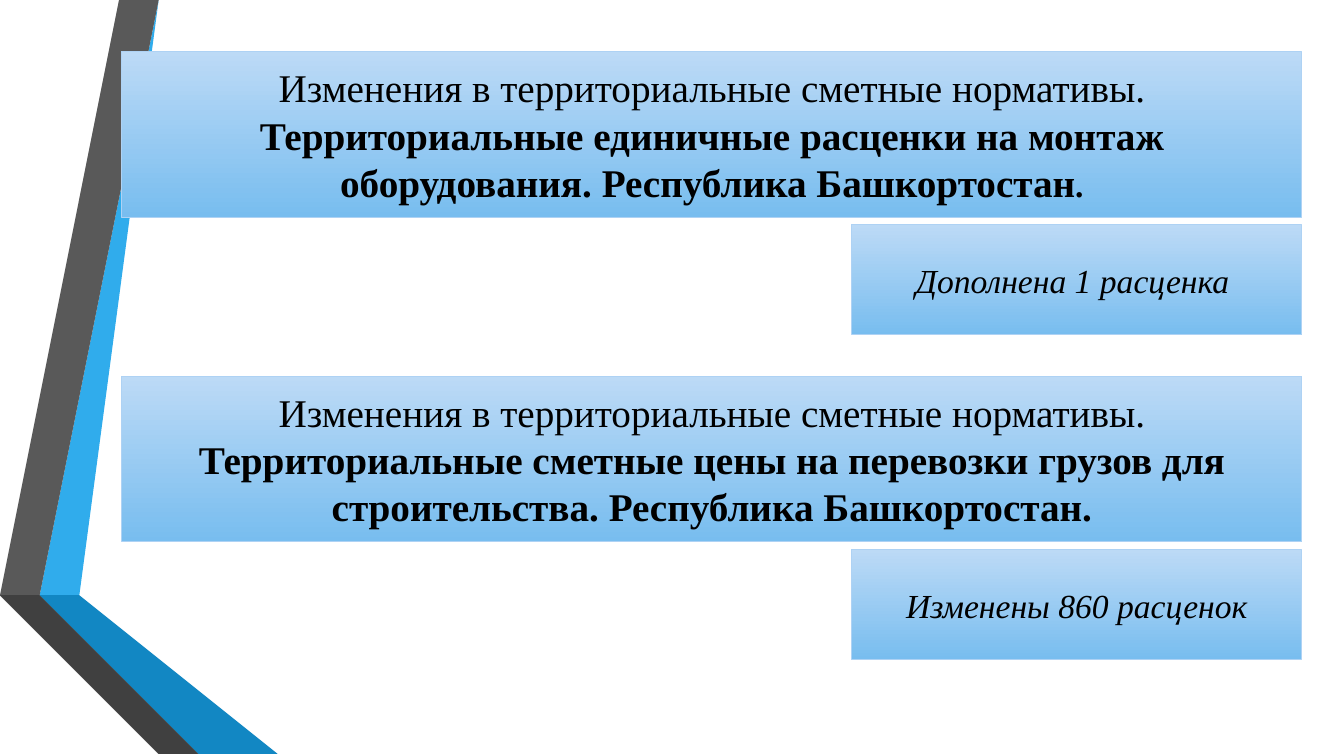
"""Build the slide on changes to the territorial estimate standards."""
from dataclasses import dataclass

from pptx import Presentation
from pptx.dml.color import RGBColor
from pptx.enum.shapes import MSO_SHAPE as Preset
from pptx.enum.text import MSO_ANCHOR as Anchor, MSO_AUTO_SIZE as AutoSize, PP_ALIGN as Align
from pptx.util import Cm, Pt

INTRO = "Изменения в территориальные сметные нормативы. "
SECTIONS = [
    {
        "heading": [
            (INTRO, False, None),
            ("Территориальные единичные расценки на монтаж оборудования. "
             "Республика Башкортостан", True, None),
            (".", True, 24),
        ],
        "note": "Дополнена 1 расценка ",
    },
    {
        "heading": [
            (INTRO, False, None),
            ("Территориальные сметные цены на перевозки грузов для строительства. "
             "Республика Башкортостан.", True, None),
        ],
        "note": "Изменены 860 расценок",
    },
]
RIBBONS = [
    ("30ACEC", [(1.27, 14.68), (1.96, 14.81), (4.39, 0), (3.68, 0)]),
    ("595959", [(3.53, 0), (2.82, 0), (0.41, 14.55), (1.12, 14.66)]),
    ("262626", [(0.41, 14.55), (3.68, 19.05), (3.84, 19.05)]),
    ("0C5A82", [(1.27, 14.71), (5.28, 19.05), (5.44, 19.05)]),
    ("1287C3", [(1.27, 14.69), (5.44, 19.05), (7.19, 19.05), (1.96, 14.81)]),
    ("404040", [(0.41, 14.55), (3.84, 19.05), (5.13, 19.05), (1.22, 14.81), (1.12, 14.66)]),
]

RIGHT, TOP, PITCH, GAP = 32.81, 1.3, 8.18, 0.2
HEADING_SIZE = (29.74, 4.17)
NOTE_SIZE = (11.35, 2.77)


@dataclass(frozen=True)
class Theme:
    font: str = "Times New Roman"
    text: str = "000000"
    gradient: tuple = ("BCDAF6", "78BDEF")
    border: str = "AED2F4"
    border_width: float = 0.75
    heading: int = 28
    note: int = 24


THEME = Theme()


def color(code):
    return RGBColor.from_string(code)


def draw_ribbon(page, code, points):
    builder = page.shapes.build_freeform(*points[0], scale=Cm(1))
    builder.add_line_segments(points[1:], close=True)
    ribbon = builder.convert_to_shape()
    ribbon.shadow.inherit = False
    ribbon.fill.solid()
    ribbon.fill.fore_color.rgb = color(code)
    ribbon.line.fill.background()


def place(box, top, size):
    width, height = size
    box.left, box.top = Cm(RIGHT - width), Cm(top)
    box.width, box.height = Cm(width), Cm(height)


def paint(box):
    box.fill.gradient()
    box.fill.gradient_angle = 270
    for stop, code in zip(box.fill.gradient_stops, THEME.gradient):
        stop.color.rgb = color(code)
    box.line.color.rgb = color(THEME.border)
    box.line.width = Pt(THEME.border_width)


def write(box, spans, size, italic=False):
    frame = box.text_frame
    frame.word_wrap = True
    frame.auto_size = AutoSize.NONE
    frame.vertical_anchor = Anchor.MIDDLE
    para = frame.paragraphs[0]
    para.alignment = Align.CENTER
    para.font.name, para.font.size = THEME.font, Pt(size)
    para.font.color.rgb = color(THEME.text)
    para.font.italic = italic
    for text, bold, own_size in spans:
        span = para.add_run()
        span.text = text
        span.font.bold = bold
        if own_size:
            span.font.size = Pt(own_size)


def add_box(page):
    box = page.shapes.add_shape(Preset.RECTANGLE, 0, 0, Cm(1), Cm(1))
    box.shadow.inherit = False
    return box


def main():
    deck = Presentation()
    deck.slide_width, deck.slide_height = Cm(33.87), Cm(19.05)
    page = deck.slides.add_slide(deck.slide_layouts.get_by_name("Title Only"))
    for code, points in RIBBONS:
        draw_ribbon(page, code, points)

    title = page.shapes.title
    title.element.getparent().append(title.element)
    for index, section in enumerate(SECTIONS):
        top = TOP + index * PITCH
        heading = add_box(page) if index else title
        place(heading, top, HEADING_SIZE)
        paint(heading)
        write(heading, section["heading"], THEME.heading)

        note = add_box(page)
        place(note, top + HEADING_SIZE[1] + GAP, NOTE_SIZE)
        paint(note)
        write(note, [(section["note"], False, None)], THEME.note, italic=True)

    deck.save("out.pptx")


if __name__ == "__main__":
    main()
